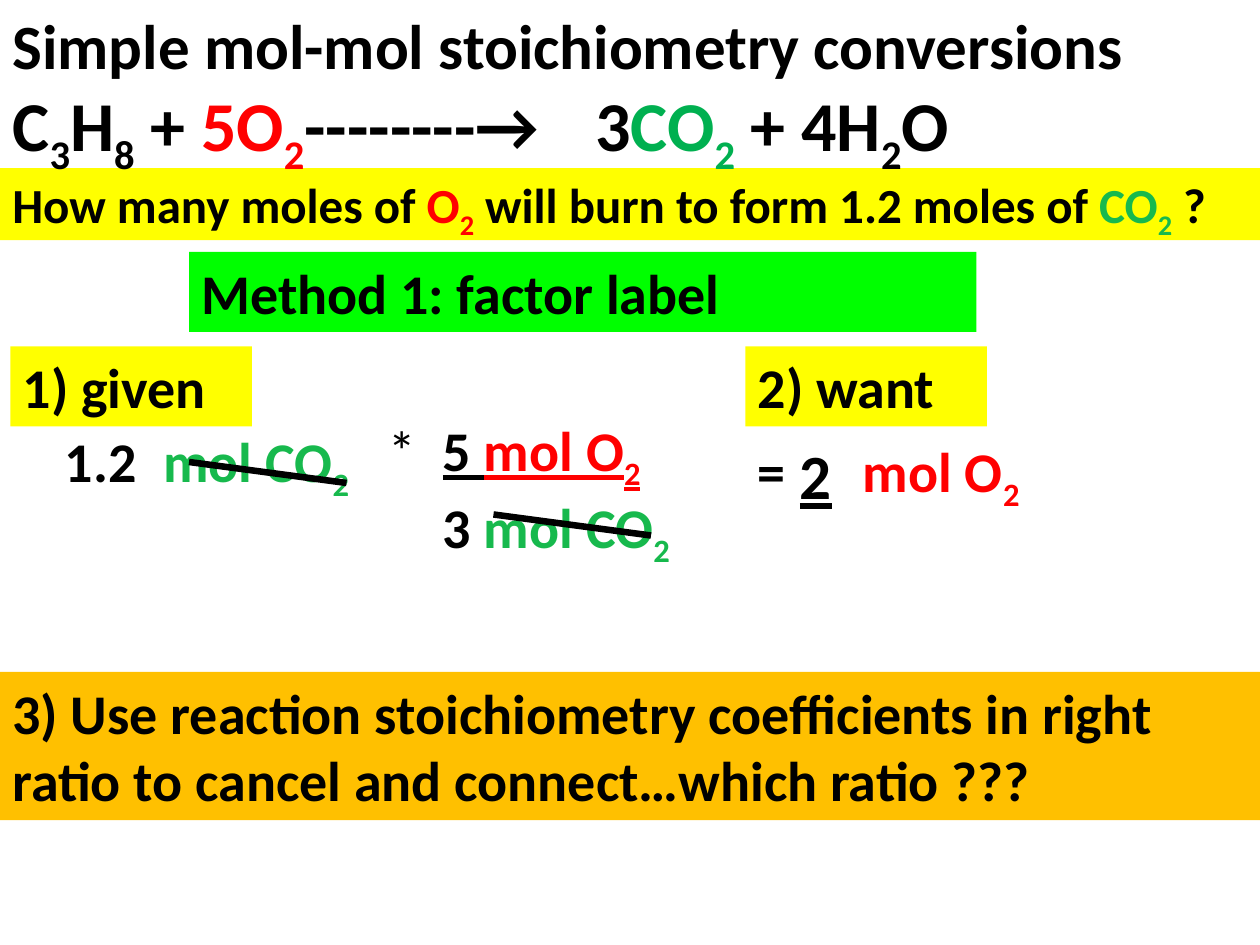
from dataclasses import dataclass

from lxml import etree
from pptx import Presentation
from pptx import util as u
from pptx.dml.color import RGBColor
from pptx.enum import shapes, text
from pptx.oxml.ns import qn

PX = 9525


@dataclass(frozen=True)
class Theme:
    """Colours, font and type sizes of the slide."""
    font: str = "Calibri"
    ink: str = "000000"
    paper: str = "FFFFFF"
    yellow: str = "FFFF00"
    lime: str = "00FF00"
    amber: str = "FFC000"
    oxygen: str = "FF0000"
    carbon: str = "17B94D"
    product: str = "00B050"
    question: int = 28
    body: int = 32
    title: int = 36
    equation: int = 40
    strike: int = 5


@dataclass(frozen=True)
class Span:
    """A stretch of text in one style, where an underscore lowers the next character."""
    text: str
    color: str = Theme.ink
    bold: bool = True
    underline: bool = False


class Board:
    """Holds the theme and the current slide, and draws each kind of element."""

    def __init__(self, prs, theme):
        """Add a title-only slide."""
        self.theme = theme
        self.s = prs.slides.add_slide(prs.slide_layouts[5])

    def add_run(self, p, words, span, size, lowered=False):
        """Append one formatted run."""
        r = p.add_run()
        r.text = words
        r.font.name, r.font.size = self.theme.font, u.Pt(size)
        r.font.bold, r.font.underline = span.bold, span.underline
        r.font.color.rgb = RGBColor.from_string(span.color)
        if lowered:
            r.font._element.set("baseline", "-25000")

    def add_spans(self, p, spans, size, tab=None):
        """Fill a left-aligned paragraph, with an optional tab stop."""
        p.alignment = text.PP_ALIGN.LEFT
        if tab:
            stops = etree.SubElement(p._p.get_or_add_pPr(), qn("a:tabLst"))
            etree.SubElement(stops, qn("a:tab"), pos=str(tab * PX), algn="l")
        for span in spans:
            first, *rest = span.text.split("_")
            if first:
                self.add_run(p, first, span, size)
            for part in rest:
                self.add_run(p, part[0], span, size, lowered=True)
                if part[1:]:
                    self.add_run(p, part[1:], span, size)

    def place(self, sp, box, lines, tab=None):
        """Position a shape and fill in its lines of (size, spans)."""
        sp.left, sp.top, sp.width, sp.height = (n * PX for n in box)
        tf = sp.text_frame
        tf.word_wrap = True
        tf.auto_size = text.MSO_AUTO_SIZE.SHAPE_TO_FIT_TEXT
        tf.vertical_anchor = text.MSO_ANCHOR.TOP
        for i, (size, spans) in enumerate(lines):
            p = tf.paragraphs[0] if i == 0 else tf.add_paragraph()
            self.add_spans(p, spans, size, tab)

    def title(self, box, lines):
        """Use the title placeholder, in front of what is already drawn."""
        sp = self.s.shapes.title
        self.s.shapes.element.append(sp.element)
        self.place(sp, box, lines)

    def label(self, box, lines, tab=None):
        """Add a plain text box."""
        self.place(self.s.shapes.add_textbox(0, 0, 0, 0), box, lines, tab)

    def band(self, box, fill, lines, tab=None):
        """Add a filled rectangle with text."""
        sp = self.s.shapes.add_shape(shapes.MSO_SHAPE.RECTANGLE, 0, 0, 0, 0)
        sp.shadow.inherit = False
        sp.fill.solid()
        sp.fill.fore_color.rgb = RGBColor.from_string(fill)
        sp.line.fill.background()
        self.place(sp, box, lines, tab)

    def strike(self, x, y):
        """Cross out a unit with a slanted line."""
        ends = (n * PX for n in (x, y, x + 120, y + 16))
        line = self.s.shapes.add_connector(shapes.MSO_CONNECTOR.STRAIGHT, *ends)
        line.line.color.rgb = RGBColor.from_string(self.theme.ink)
        line.line.width = self.theme.strike * PX
        etree.SubElement(line.element.spPr, qn("a:effectLst"))


def main():
    """Build the stoichiometry slide."""
    prs = Presentation()
    prs.slide_width, prs.slide_height = 960 * PX, 720 * PX
    t = Theme()
    b = Board(prs, t)
    mol_co2 = Span("mol CO_2", t.carbon)

    b.band((0, 128, 960, 55), t.yellow, [(t.question, [
        Span("How many moles of "), Span("O_2", t.oxygen),
        Span(" will burn to form 1.2 moles of "), Span("CO_2", t.carbon), Span(" ?")])])
    b.title((0, 0, 960, 132), [
        (t.title, [Span("Simple mol-mol stoichiometry conversions")]),
        (t.equation, [Span("C_3H_8 + "), Span("5O_2", t.oxygen), Span("--------→ \t 3"),
                      Span("CO_2", t.product), Span(" + 4H_2O")])])
    b.band((144, 192, 600, 61), t.lime, [(t.body, [Span("Method 1: factor label")])])

    b.label((40, 320, 288, 61), [(t.body, [Span("1.2\t"), mol_co2])], tab=75)
    b.label((286, 312, 242, 161), [
        (t.body, [Span("*\t", bold=False), Span("5 ", underline=True),
                  Span("mol O_2", t.oxygen, underline=True)]),
        (t.body, [Span("\t3 "), mol_co2])], tab=42)

    for x, heading in ((8, "1) given"), (568, "2) want")):
        b.band((x, 264, 184, 61), t.yellow, [(t.body, [Span(heading)])])
    b.band((0, 512, 960, 113), t.amber, [(t.body, [Span(
        "3) Use reaction stoichiometry coefficients in right ratio "
        "to cancel and connect…which ratio ???")])])

    b.band((568, 328, 264, 61), t.paper,
           [(t.body, [Span("=\t"), Span("mol O_2", t.oxygen)])], tab=80)
    for x, y in ((376, 392), (144, 352)):
        b.strike(x, y)
    b.band((600, 328, 56, 68), t.paper, [(t.title, [Span("2", underline=True)])])

    prs.save("out.pptx")


if __name__ == "__main__":
    main()
